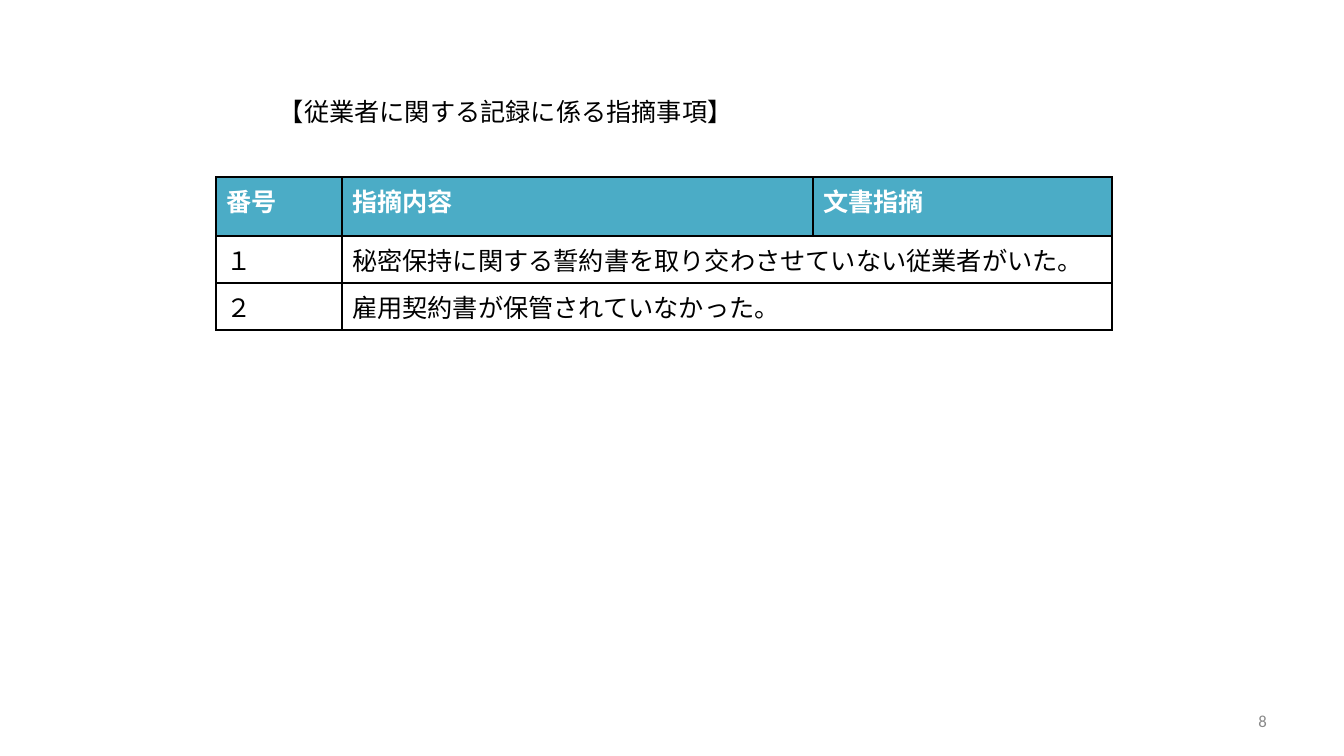
from dataclasses import dataclass

import pptx
import pptx.dml.color
import pptx.enum.text
import pptx.oxml
import pptx.oxml.ns
import pptx.util

SCALE = 914400 / 100.8
ALIGN = pptx.enum.text.PP_ALIGN


@dataclass(frozen=True)
class Theme:
    font: str = "Calibri"
    black: str = "000000"
    white: str = "FFFFFF"
    teal: str = "4BACC6"
    gray: str = "898989"
    body: int = 18
    small: int = 12
    border: int = 1


@dataclass(frozen=True)
class Label:
    text: str
    left: int
    top: int
    width: int
    height: int
    size: int
    color: str
    align: ALIGN


THEME = Theme()
LABELS = [
    Label("【従業者に関する記録に係る指摘事項】", 279, 91, 600, 41,
          THEME.body, THEME.black, ALIGN.LEFT),
    Label("8", 964, 701, 303, 40, THEME.small, THEME.gray, ALIGN.RIGHT),
]
LEFT, TOP = 216, 177
COLS = [126, 471, 299]
ROWS = [59, 47, 47]
HEAD = ["番号", "指摘内容", "文書指摘"]
ITEMS = [
    ["１", "秘密保持に関する誓約書を取り交わさせていない従業者がいた。"],
    ["２", "雇用契約書が保管されていなかった。"],
]


def px(length: int) -> pptx.util.Emu:
    return pptx.util.Emu(round(length * SCALE))


def rgb(color: str) -> pptx.dml.color.RGBColor:
    return pptx.dml.color.RGBColor.from_string(color)


def style(frame, size: int, color: str, bold: bool = False) -> None:
    font = frame.paragraphs[0].font
    font.name = THEME.font
    font.size = pptx.util.Pt(size)
    font.bold = bold
    font.color.rgb = rgb(color)


def add_label(slide, label: Label) -> None:
    box = slide.shapes.add_textbox(
        px(label.left), px(label.top), px(label.width), px(label.height))
    frame = box.text_frame
    frame.word_wrap = True
    frame.margin_left = frame.margin_right = 0
    frame.margin_top = frame.margin_bottom = 0
    frame.vertical_anchor = pptx.enum.text.MSO_ANCHOR.MIDDLE
    frame.text = label.text
    frame.paragraphs[0].alignment = label.align
    style(frame, label.size, label.color)


def add_edges(cell) -> None:
    """Draw a thin line on all four sides of a cell."""
    props = cell._tc.get_or_add_tcPr()
    for spot, side in enumerate(("lnL", "lnR", "lnT", "lnB")):
        props.insert(spot, pptx.oxml.parse_xml(
            f'<a:{side} {pptx.oxml.ns.nsdecls("a")} '
            f'w="{pptx.util.Pt(THEME.border)}"><a:solidFill>'
            f'<a:srgbClr val="{THEME.black}"/></a:solidFill></a:{side}>'))


def add_grid(slide) -> None:
    table = slide.shapes.add_table(
        len(ROWS), len(COLS), px(LEFT), px(TOP),
        px(sum(COLS)), px(sum(ROWS))).table
    for column, width in zip(table.columns, COLS):
        column.width = px(width)
    for row, height in zip(table.rows, ROWS):
        row.height = px(height)
    for index, texts in enumerate([HEAD, *ITEMS]):
        head = index == 0
        for spot in range(len(COLS)):
            cell = table.cell(index, spot)
            cell.fill.solid()
            cell.fill.fore_color.rgb = rgb(THEME.teal if head else THEME.white)
            add_edges(cell)
            if spot < len(texts):
                cell.text = texts[spot]
            style(cell.text_frame, THEME.body,
                  THEME.white if head else THEME.black, head)
        if not head:
            table.cell(index, 1).merge(table.cell(index, 2))


def main() -> None:
    deck = pptx.Presentation()
    deck.slide_width, deck.slide_height = px(1344), px(756)
    slide = deck.slides.add_slide(deck.slide_layouts[6])
    for label in LABELS:
        add_label(slide, label)
    add_grid(slide)
    deck.save("out.pptx")


if __name__ == "__main__":
    main()
